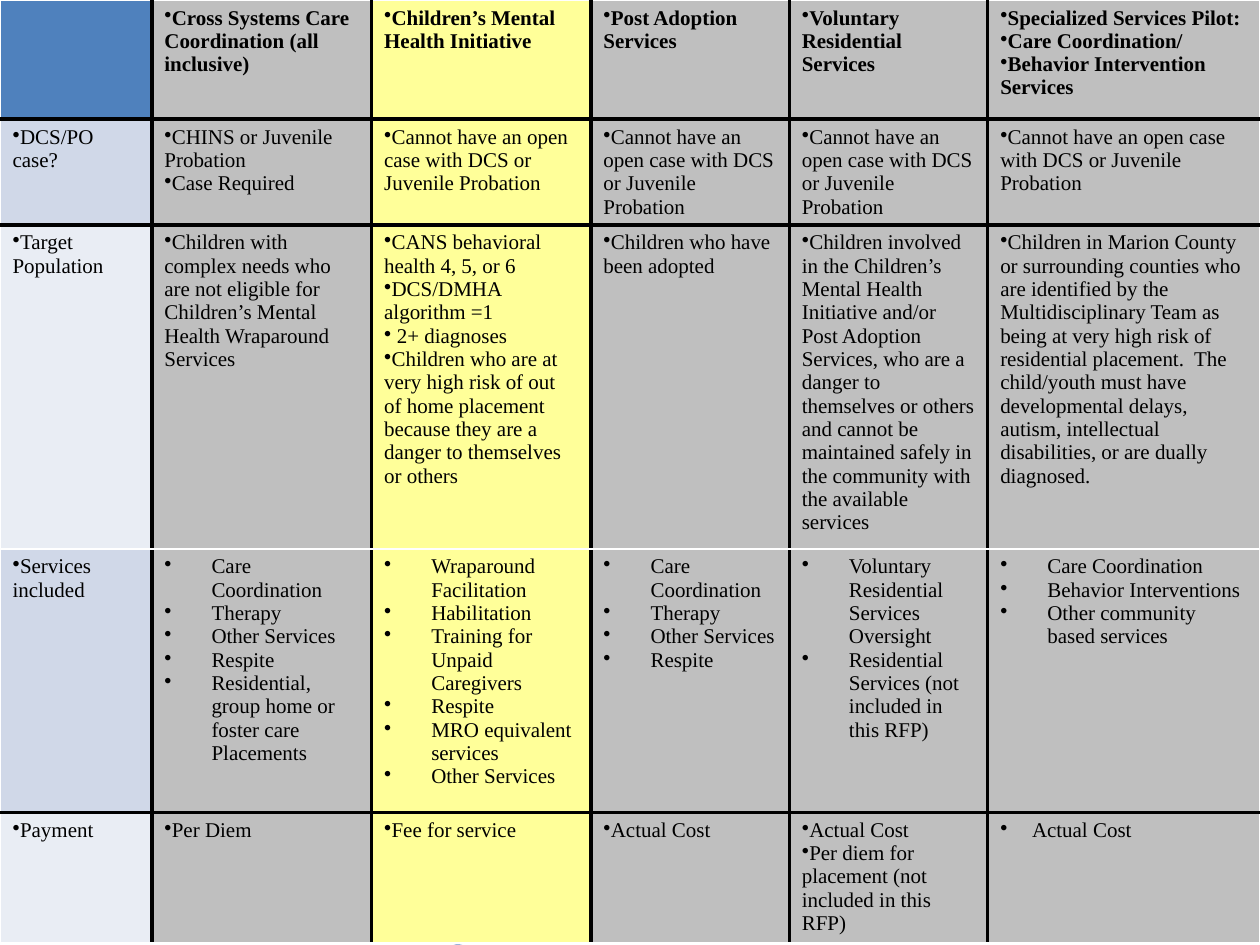
import pptx
import pptx.dml.color
import pptx.enum.dml
import pptx.enum.shapes
import pptx.oxml
import pptx.oxml.ns
import pptx.util
import lxml.etree

Cm = pptx.util.Cm
RGB = pptx.dml.color.RGBColor
BLACK = RGB(0x00, 0x00, 0x00)
WHITE = RGB(0xFF, 0xFF, 0xFF)
BLUE = RGB(0x4F, 0x81, 0xBD)
GREY = RGB(0xBF, 0xBF, 0xBF)
YELLOW = RGB(0xFF, 0xFF, 0x99)
BANDS = (RGB(0xD0, 0xD8, 0xE8), RGB(0xE9, 0xED, 0xF4))
SWEEP = RGB(0xA7, 0xB9, 0xDB)
EDGE = RGB(0x9E, 0xB3, 0xD6)

WIDTHS = (3.06, 4.43, 4.42, 4.0, 4.0, 5.49)
HEIGHTS = (2.4, 1.93, 6.53, 5.31, 2.64)
SERVICES = 3
CLOSED = ["Cannot have an open case with DCS or Juvenile Probation"]
ROWS = [
    [
        [],
        ["Cross Systems Care Coordination (all inclusive)"],
        ["Children’s Mental Health Initiative"],
        ["Post Adoption Services"],
        ["Voluntary Residential Services"],
        ["Specialized Services Pilot:", "Care Coordination/",
         "Behavior Intervention Services"],
    ],
    [
        ["DCS/PO case?"],
        ["CHINS or Juvenile Probation", "Case Required"],
        CLOSED, CLOSED, CLOSED, CLOSED,
    ],
    [
        ["Target Population"],
        ["Children with complex needs who are not eligible for Children’s "
         "Mental Health Wraparound Services"],
        ["CANS behavioral health 4, 5, or 6",
         "DCS/DMHA algorithm =1",
         " 2+ diagnoses",
         "Children who are at very high risk of out of home placement "
         "because they are a danger to themselves or others"],
        ["Children who have been adopted"],
        ["Children involved in the Children’s Mental Health Initiative and/or "
         "Post Adoption Services, who are a danger to themselves or others and "
         "cannot be maintained safely in the community with the available services"],
        ["Children in Marion County or surrounding counties who are identified "
         "by the Multidisciplinary Team as being at very high risk of residential "
         "placement.  The child/youth must have developmental delays, autism, "
         "intellectual disabilities, or are dually diagnosed."],
    ],
    [
        ["Services included"],
        ["Care Coordination", "Therapy", "Other Services", "Respite",
         "Residential, group home or foster care Placements"],
        ["Wraparound Facilitation", "Habilitation",
         "Training for Unpaid Caregivers", "Respite",
         "MRO equivalent services", "Other Services"],
        ["Care Coordination", "Therapy", "Other Services", "Respite"],
        ["Voluntary Residential Services Oversight",
         "Residential Services (not included in this RFP)"],
        ["Care Coordination", "Behavior Interventions",
         "Other community based services"],
    ],
    [
        ["Payment"],
        ["Per Diem"],
        ["Fee for service"],
        ["Actual Cost"],
        ["Actual Cost", "Per diem for placement (not included in this RFP)"],
        ["Actual Cost"],
    ],
]


def add_tag(parent, name, **attrs):
    tag = lxml.etree.SubElement(parent, pptx.oxml.ns.qn(name))
    for key, value in attrs.items():
        tag.set(key, str(value))
    return tag


def write(frame, lines, size=12, bold=False, color=BLACK,
          font="Times New Roman", indent=0):
    for i, line in enumerate(lines):
        para = frame.add_paragraph() if i else frame.paragraphs[0]
        props = para._p.get_or_add_pPr()
        props.set("marL", str(Cm(indent)))
        props.set("indent", str(-Cm(indent)))
        add_tag(props, "a:buChar", char="•")
        run = para.add_run()
        run.text = line
        run.font.size = pptx.util.Pt(size)
        run.font.bold = bold
        run.font.name = font
        run.font.color.rgb = color


def rule_cell(cell, sides):
    props = cell._tc.get_or_add_tcPr()
    for side, white in sides.items():
        width = pptx.util.Pt(1 if white else 2.25)
        line = add_tag(props, "a:ln" + side, w=int(width))
        fill = add_tag(line, "a:solidFill")
        add_tag(fill, "a:srgbClr", val=WHITE if white else BLACK)


def pick_fill(row, col):
    if col == 0:
        return BANDS[(row - 1) % 2] if row else BLUE
    return YELLOW if col == 2 else GREY


def pick_dent(row, col):
    if col and row == SERVICES:
        return 0.95
    return 0.64 if (row, col) == (len(ROWS) - 1, len(WIDTHS) - 1) else 0


def draw_grid(slide, left, top):
    last = len(WIDTHS) - 1
    frame = slide.shapes.add_table(
        len(ROWS), len(WIDTHS), Cm(left), Cm(top),
        Cm(sum(WIDTHS)), Cm(sum(HEIGHTS)))
    table = frame.table
    table.first_row = table.horz_banding = False
    for col, width in zip(table.columns, WIDTHS):
        col.width = Cm(width)
    for r, (row, height) in enumerate(zip(ROWS, HEIGHTS)):
        table.rows[r].height = Cm(height)
        for c, lines in enumerate(row):
            cell = table.cell(r, c)
            rule_cell(cell, {
                "L": c == 0,
                "R": c == last,
                "T": r in (0, SERVICES),
                "B": r in (SERVICES - 1, len(ROWS) - 1),
            })
            cell.fill.solid()
            cell.fill.fore_color.rgb = pick_fill(r, c)
            write(cell.text_frame, lines, bold=r == 0, indent=pick_dent(r, c))


def draw_wedge(slide, left, top, points, color, alpha=100):
    spots = [(left + x, top + y) for x, y in points]
    pen = slide.shapes.build_freeform(*spots[0], scale=Cm(1))
    pen.add_line_segments(spots[1:], close=True)
    shape = pen.convert_to_shape()
    shape.shadow.inherit = False
    shape.line.fill.background()
    shape.fill.solid()
    shape.fill.fore_color.rgb = color
    if alpha < 100:
        tint = shape._element.spPr.find(".//" + pptx.oxml.ns.qn("a:srgbClr"))
        add_tag(tint, "a:alpha", val=alpha * 1000)


def draw_sweep(slide, left, top):
    draw_wedge(slide, left, top,
               [(0.05, 0.05), (13.76, 2.59), (10.23, 2.59), (0.05, 0.03)],
               SWEEP, alpha=40)
    draw_wedge(slide, left, top,
               [(0, 0), (10.26, 2.59), (8.1, 2.62), (0.03, 0.03)], BLACK)
    line = slide.shapes.add_connector(
        pptx.enum.shapes.MSO_CONNECTOR.STRAIGHT,
        Cm(left - 1.38), Cm(top - 0.4), Cm(left + 8.07), Cm(top + 2.62))
    line.line.color.rgb = EDGE
    line.line.width = pptx.util.Pt(0.95)
    add_tag(line._element.spPr, "a:effectLst")


def main():
    deck = pptx.Presentation()
    deck.slide_width = Cm(25.4)
    deck.slide_height = Cm(19.05)
    slide = deck.slides.add_slide(deck.slide_layouts[6])
    draw_sweep(slide, 1.35, 16.48)
    draw_grid(slide, 0, 0)
    deck.save("out.pptx")


if __name__ == "__main__":
    main()
